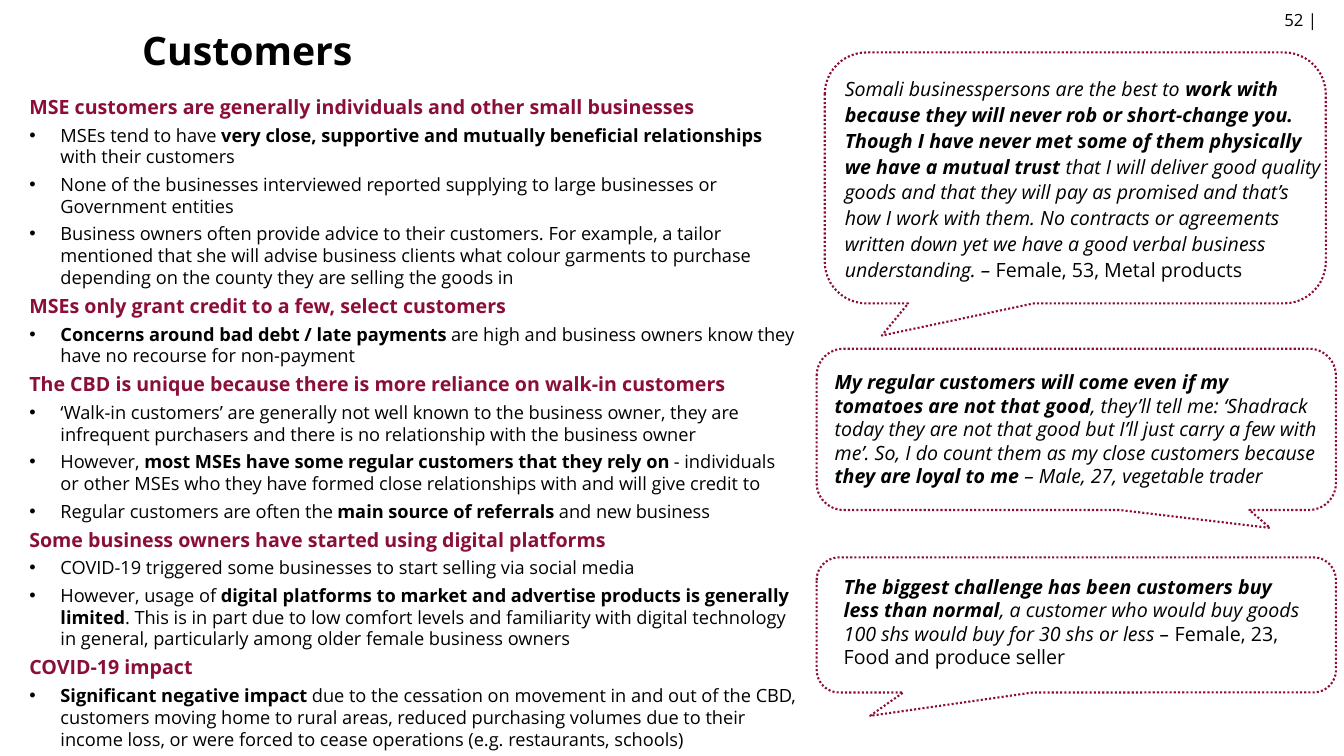
from lxml.etree import SubElement
from pptx import Presentation
from pptx.dml.color import RGBColor
from pptx.enum.dml import MSO_LINE
from pptx.enum.shapes import MSO_SHAPE
from pptx.enum.text import MSO_ANCHOR, MSO_AUTO_SIZE, PP_ALIGN
from pptx.oxml.ns import qn
from pptx.util import Inches, Pt

FONT = "Open Sans"
BLACK = RGBColor(0x00, 0x00, 0x00)
WINE = RGBColor(0x8B, 0x0E, 0x3A)
BULLET_INDENT = Inches(0.31)

# Each section is a heading and its bullets; each bullet is a list of (text, style) spans.
SECTIONS = [
    ("MSE customers are generally individuals and other small businesses", [
        [("MSEs tend to have ", ""),
         ("very close, supportive and mutually beneficial relationships", "b"),
         (" with their customers", "")],
        [("None of the businesses interviewed reported supplying to large businesses or "
          "Government entities", "")],
        [("Business owners often provide advice to their customers. For example, a tailor "
          "mentioned that she will advise business clients what colour garments to purchase "
          "depending on the county they are selling the goods in", "")],
    ]),
    ("MSEs only grant credit to a few, select customers", [
        [("Concerns around bad debt / late payments ", "b"),
         ("are high and business owners know they have no recourse for non-payment", "")],
    ]),
    ("The CBD is unique because there is more reliance on walk-in customers", [
        [("‘Walk-in customers’ are generally not well known to the business owner, they are "
          "infrequent purchasers and there is no relationship with the business owner", "")],
        [("However, ", ""),
         ("most MSEs have some regular customers that they rely on ", "b"),
         ("- individuals or other MSEs who they have formed close relationships with and "
          "will give credit to", "")],
        [("Regular customers are often the ", ""),
         ("main source of referrals", "b"),
         (" and new business", "")],
    ]),
    ("Some business owners have started using digital platforms", [
        [("COVID-19 triggered some businesses to start selling via social media", "")],
        [("However, usage of ", ""),
         ("digital platforms to market and advertise products is generally limited", "b"),
         (". This is in part due to low comfort levels and familiarity with digital "
          "technology in general, particularly among older female business owners", "")],
    ]),
    ("COVID-19 impact", [
        [("Significant negative impact ", "b"),
         ("due to the cessation on movement in and out of the CBD, customers moving home to "
          "rural areas, reduced purchasing volumes due to their income loss, or were forced "
          "to cease operations (e.g. restaurants, schools)", "")],
    ]),
]

# Callout box, text inset (left, top), text size, callout tail (x, y), line spacing, spans.
QUOTES = [
    ((8.18, 0.52, 4.97, 2.49), (0.1, 0.17), (4.99, 2.15), (-0.386, 0.628), 1.1, [
        ("Somali businesspersons are the best to ", "i"),
        ("work with because they will never rob or short-change you. Though I have never met "
         "some of them physically we have a mutual trust ", "bi"),
        ("that I will deliver good quality goods and that they will pay as promised and "
         "that’s how I work with them. No contracts or agreements written down yet we have "
         "a good verbal business understanding. – ", "i"),
        ("Female, 53, Metal products", "")]),
    ((8.1, 3.46, 5.15, 1.6), (0.08, 0.16), (4.99, 1.28), (0.373, 0.611), 1.0, [
        ("My regular customers will come even if my tomatoes are not that good", "bi"),
        (", they’ll tell me: ‘Shadrack today they are not that good but I’ll just carry a few "
         "with me’. So, I do count them as my close customers because ", "i"),
        ("they are loyal to me", "bi"),
        (" – Male, 27, vegetable trader", "i")]),
    ((8.1, 5.53, 5.15, 1.34), (0.17, 0.12), (4.8, 1.04), (-0.397, 0.673), 1.0, [
        ("The biggest challenge has been customers buy less than normal", "bi"),
        (", a customer who would buy goods 100 shs would buy for 30 shs or less – ", "i"),
        ("Female, 23, Food and produce seller", "")]),
]


def place(shape, box):
    shape.left, shape.top, shape.width, shape.height = map(Inches, box)


def add_spans(para, spans, size, color=BLACK):
    """Add one run per (text, style) span; style holds b for bold and i for italic."""
    for text, style in spans:
        run = para.add_run()
        run.text = text
        font = run.font
        font.name, font.size = FONT, Pt(size)
        font.bold, font.italic = "b" in style, "i" in style
        font.color.rgb = color


def set_bullet(para, bulleted):
    properties = para._p.get_or_add_pPr()
    indent = BULLET_INDENT if bulleted else 0
    properties.set("marL", str(indent))
    properties.set("indent", str(-indent))
    if bulleted:
        SubElement(properties, qn("a:buFont"), typeface="Arial")
        SubElement(properties, qn("a:buChar"), char="•")
    else:
        SubElement(properties, qn("a:buNone"))


def fill_title(title, box):
    place(title, box)
    frame = title.text_frame
    frame.auto_size = MSO_AUTO_SIZE.NONE
    frame.vertical_anchor = MSO_ANCHOR.MIDDLE
    para = frame.paragraphs[0]
    para.alignment = PP_ALIGN.LEFT
    para.line_spacing = 0.9
    add_spans(para, [("Customers", "b")], 28)


def fill_findings(body, box):
    place(body, box)
    frame = body.text_frame
    frame.word_wrap = True
    frame.auto_size = MSO_AUTO_SIZE.SHAPE_TO_FIT_TEXT
    lines = []
    for heading, bullets in SECTIONS:
        lines.append((False, [(heading, "b")]))
        lines += [(True, spans) for spans in bullets]
    for index, (bulleted, spans) in enumerate(lines):
        para = frame.add_paragraph() if index else frame.paragraphs[0]
        set_bullet(para, bulleted)
        para.space_before, para.space_after = Pt(0), Pt(4)
        add_spans(para, spans, 13 if bulleted else 14, BLACK if bulleted else WINE)


def add_text(page, box, spans, size, line_spacing=1.0):
    frame = page.shapes.add_textbox(*map(Inches, box)).text_frame
    frame.word_wrap = True
    para = frame.paragraphs[0]
    para.line_spacing = line_spacing
    add_spans(para, spans, size)
    return frame


def add_quote(page, box, inset, text_size, tail, line_spacing, spans):
    callout = page.shapes.add_shape(MSO_SHAPE.ROUNDED_RECTANGULAR_CALLOUT, *map(Inches, box))
    callout.adjustments[0], callout.adjustments[1] = tail
    callout.shadow.inherit = False
    callout.fill.background()
    callout.line.color.rgb = WINE
    callout.line.width = Pt(1.5)
    callout.line.dash_style = MSO_LINE.ROUND_DOT
    text_box = (box[0] + inset[0], box[1] + inset[1], *text_size)
    frame = add_text(page, text_box, spans, 14, line_spacing)
    frame.auto_size = MSO_AUTO_SIZE.SHAPE_TO_FIT_TEXT


def main():
    deck = Presentation()
    deck.slide_width, deck.slide_height = Inches(13.33), Inches(7.5)
    page = deck.slides.add_slide(deck.slide_layouts[1])
    fill_title(page.shapes.title, (1.31, 0.25, 10.71, 0.54))
    fill_findings(page.placeholders[1], (0.19, 0.89, 7.81, 6.6))
    add_text(page, (12.64, 0.05, 0.69, 0.4), [("52 |", "")], 12)
    for quote in QUOTES:
        add_quote(page, *quote)
    deck.save("out.pptx")


if __name__ == "__main__":
    main()
